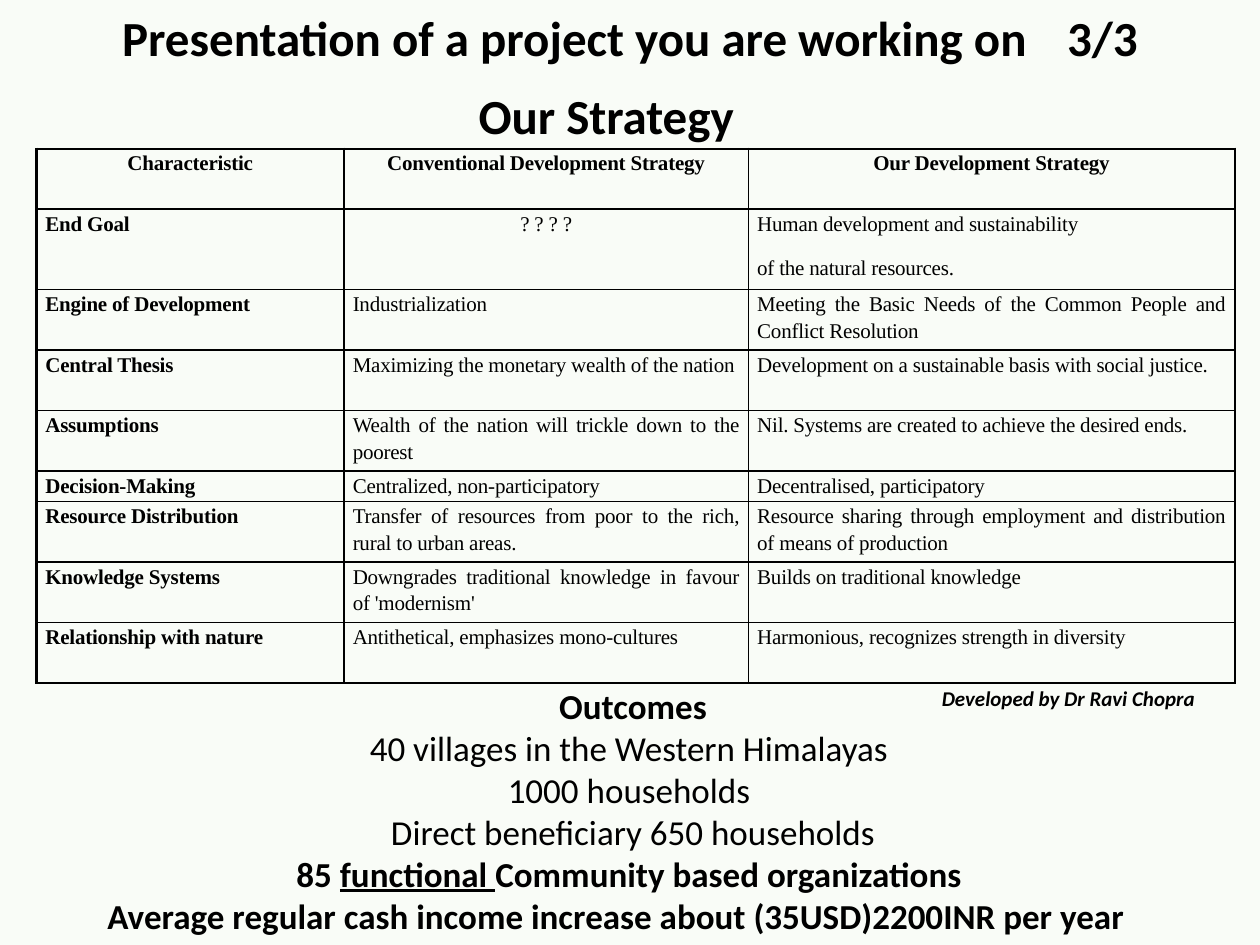
import pptx
import pptx.util
import pptx.dml.color
import pptx.enum.text
import pptx.oxml
import pptx.oxml.ns
from pptx.util import Inches

COLORS = {"background": "F9FCF7", "ink": "000000"}
ALIGN = pptx.enum.text.PP_ALIGN
ANCHOR = pptx.enum.text.MSO_ANCHOR


def add_run(p, text, size, font="Calibri", bold=True, italic=False, underline=False):
    r = p.add_run()
    r.text = text
    r.font.name = font
    r.font.size = pptx.util.Pt(size)
    r.font.bold = bold
    r.font.italic = italic
    r.font.underline = underline
    r.font.color.rgb = pptx.dml.color.RGBColor.from_string(COLORS["ink"])
    return r


def add_text_box(s, left, top, width, height):
    tf = s.shapes.add_textbox(Inches(left), Inches(top), Inches(width), Inches(height)).text_frame
    tf.word_wrap = True
    tf.vertical_anchor = ANCHOR.MIDDLE
    tf.paragraphs[0].alignment = ALIGN.CENTER
    return tf


prs = pptx.Presentation()
prs.slide_width = Inches(10)
prs.slide_height = Inches(7.5)
s = prs.slides.add_slide(prs.slide_layouts[6])
s.background.fill.solid()
s.background.fill.fore_color.rgb = pptx.dml.color.RGBColor.from_string(COLORS["background"])

tf = add_text_box(s, 0, 0.01, 10, 0.57)
add_run(tf.paragraphs[0], "Presentation of a project you are working on\t3/3", 28)

rows = [
    ["Characteristic", "Conventional Development Strategy", "Our Development Strategy"],
    ["End Goal", "? ? ? ?", "Human development and sustainability\nof the natural resources."],
    ["Engine of Development", "Industrialization",
     "Meeting the Basic Needs of the Common People and Conflict Resolution"],
    ["Central Thesis", "Maximizing the monetary wealth of the nation",
     "Development on a sustainable basis with social justice."],
    ["Assumptions", "Wealth of the nation will trickle down to the poorest",
     "Nil. Systems are created to achieve the desired ends."],
    ["Decision-Making", "Centralized, non-participatory", "Decentralised, participatory"],
    ["Resource Distribution", "Transfer of resources from poor to the rich, rural to urban areas.",
     "Resource sharing through employment and distribution of means of production"],
    ["Knowledge Systems", "Downgrades traditional knowledge in favour of 'modernism'",
     "Builds on traditional knowledge"],
    ["Relationship with nature", "Antithetical, emphasizes mono-cultures",
     "Harmonious, recognizes strength in diversity"],
]
col_widths = [2.44, 3.21, 3.86]
row_heights = [0.48, 0.64, 0.48, 0.48, 0.48, 0.24, 0.48, 0.48, 0.48]
last_row, last_col = len(rows) - 1, len(col_widths) - 1
table = s.shapes.add_table(len(rows), len(col_widths), Inches(0.29), Inches(1.18),
                           Inches(9.51), Inches(4.24)).table
table.horz_banding = False
for column, width in zip(table.columns, col_widths):
    column.width = Inches(width)
for row, height in zip(table.rows, row_heights):
    row.height = Inches(height)

for i, texts in enumerate(rows):
    for j, text in enumerate(texts):
        cell = table.cell(i, j)
        cell.fill.background()
        cell.margin_left = cell.margin_right = Inches(0.07)
        cell.margin_top = cell.margin_bottom = 0
        centered = i == 0 or (i, j) == (1, 1)
        for n, line in enumerate(text.split("\n")):
            p = cell.text_frame.paragraphs[0] if n == 0 else cell.text_frame.add_paragraph()
            p.alignment = ALIGN.CENTER if centered else ALIGN.JUSTIFY
            p.line_spacing = 1.15
            p.space_after = pptx.util.Pt(10)
            r = add_run(p, line, 12, "Times New Roman", bold=i == 0 or j == 0)
            r.font._element.set("spc", "-10")
        outer = {"L": j == 0, "R": j == last_col, "T": i == 0, "B": i == last_row}
        for n, (side, is_outer) in enumerate(outer.items()):
            width = pptx.util.Pt(1.5 if is_outer else 1)
            border = pptx.oxml.parse_xml(
                f'<a:ln{side} {pptx.oxml.ns.nsdecls("a")} w="{width}"><a:solidFill>'
                f'<a:srgbClr val="{COLORS["ink"]}"/></a:solidFill></a:ln{side}>')
            cell._tc.get_or_add_tcPr().insert(n, border)

outcomes = [
    [("Outcomes", True, False)],
    [("40 villages in the Western Himalayas ", False, False)],
    [("1000 households ", False, False)],
    [("Direct beneficiary 650 households", False, False)],
    [("85 ", True, False), ("functional ", True, True), ("Community based organizations ", True, False)],
    [("Average regular cash income increase about (35USD)2200INR per year", True, False)],
]
tf = add_text_box(s, 0.49, 5.37, 9.07, 2.12)
tf.margin_right = Inches(0.37)
for i, runs in enumerate(outcomes):
    p = tf.paragraphs[0] if i == 0 else tf.add_paragraph()
    p.alignment = ALIGN.CENTER
    if i < len(outcomes) - 1:
        pPr = p._p.get_or_add_pPr()
        pPr.set("marL", str(Inches(0.27)))
        pPr.set("indent", "0")
    for text, bold, underline in runs:
        add_run(p, text, 20, bold=bold, underline=underline)

tf = add_text_box(s, 2.43, 0.63, 4.24, 0.57)
tf.margin_left = Inches(0.62)
add_run(tf.paragraphs[0], "Our Strategy", 28)

tf = add_text_box(s, 7.05, 5.39, 2.86, 0.3)
add_run(tf.paragraphs[0], "Developed by Dr Ravi Chopra", 12, italic=True)

prs.save("out.pptx")
